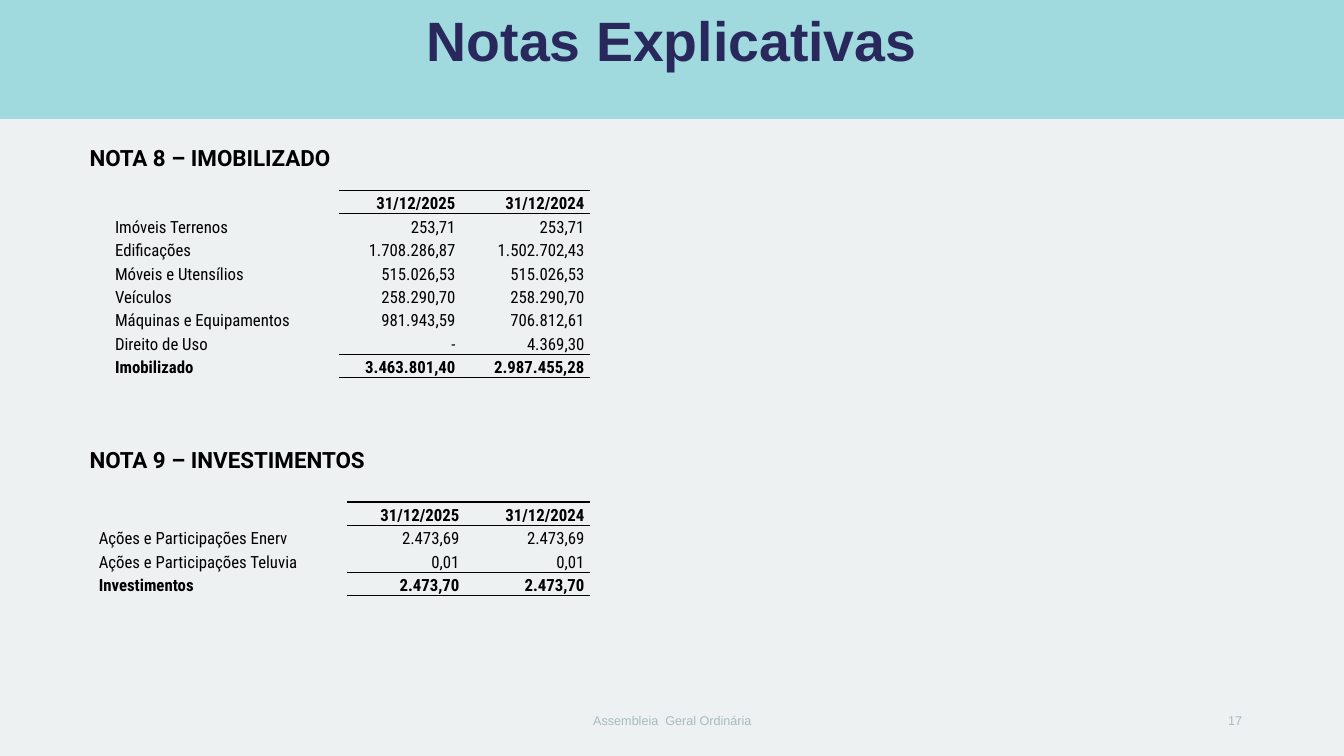
from lxml import etree
from pptx import Presentation
from pptx.dml.color import RGBColor
from pptx.enum.shapes import MSO_SHAPE
from pptx.enum.text import MSO_ANCHOR, PP_ALIGN
from pptx.oxml.ns import qn
from pptx.util import Cm, Pt

RECTANGLE = MSO_SHAPE.RECTANGLE
TOP, MIDDLE, BOTTOM = MSO_ANCHOR.TOP, MSO_ANCHOR.MIDDLE, MSO_ANCHOR.BOTTOM
LEFT, CENTER, RIGHT, JUSTIFY = PP_ALIGN.LEFT, PP_ALIGN.CENTER, PP_ALIGN.RIGHT, PP_ALIGN.JUSTIFY

BLACK, NAVY, GRAY = "000000", "29285D", "A7BBC0"
AQUA, PALE = "A0DADE", "EDF1F2"
PLAIN_TABLE_STYLE = "{2D5ABB26-0587-4C30-8999-92F81FD0307C}"
ROW_HEIGHT = 0.59

DATES = ("", "31/12/2025", "31/12/2024")
FIXED_ASSETS = [
    DATES,
    ("Imóveis Terrenos", "253,71", "253,71"),
    ("Edificações", "1.708.286,87", "1.502.702,43"),
    ("Móveis e Utensílios", "515.026,53", "515.026,53"),
    ("Veículos", "258.290,70", "258.290,70"),
    ("Máquinas e Equipamentos", "981.943,59", "706.812,61"),
    ("Direito de Uso", "-", "4.369,30"),
    ("Imobilizado", "3.463.801,40", "2.987.455,28"),
]
INVESTMENTS = [
    DATES,
    ("Ações e Participações Enerv", "2.473,69", "2.473,69"),
    ("Ações e Participações Teluvia", "0,01", "0,01"),
    ("Investimentos", "2.473,70", "2.473,70"),
]


def rgb(hex_code):
    """Turn a hex string into a colour."""
    return RGBColor.from_string(hex_code)


def write(frame, text, *, size, font="Arial", color=BLACK, bold=False,
          align=LEFT, anchor=MIDDLE, spacing=1.0):
    """Write one formatted paragraph into a text frame."""
    frame.word_wrap = True
    frame.vertical_anchor = anchor
    paragraph = frame.paragraphs[0]
    paragraph.alignment = align
    paragraph.line_spacing = spacing
    paragraph.space_before = paragraph.space_after = Pt(0)
    if not text:
        etree.SubElement(paragraph._p, qn("a:endParaRPr"), sz=str(size * 100))
        return
    run = paragraph.add_run()
    run.text = text
    run.font.size = Pt(size)
    run.font.name = font
    run.font.bold = bold
    run.font.color.rgb = rgb(color)


def add_label(slide, text, left, top, width, **text_format):
    """Add a single-line text box."""
    box = slide.shapes.add_textbox(Cm(left), Cm(top), Cm(width), Cm(1.02))
    write(box.text_frame, text, **text_format)


def add_heading(slide, text, top):
    """Add the heading of a note."""
    add_label(slide, text, 2.01, top, 10.49, size=16, font="Roboto",
              bold=True, align=JUSTIFY, spacing=1.15)


def add_title(slide, text):
    """Place the title over a coloured band across the top."""
    band = slide.shapes.add_shape(RECTANGLE, 0, 0, Cm(33.87), Cm(3))
    band.shadow.inherit = False
    band.fill.solid()
    band.fill.fore_color.rgb = rgb(AQUA)
    band.line.fill.background()
    title = slide.shapes.title
    title._element.addprevious(band._element)
    title.left, title.top, title.width, title.height = Cm(0.38), Cm(0.1), Cm(33.1), Cm(1.88)
    write(title.text_frame, text, size=39.6, color=NAVY, bold=True,
          align=CENTER, anchor=BOTTOM, spacing=0.9)


def rule_cell(cell):
    """Draw black rules above and below a cell."""
    properties = cell._tc.get_or_add_tcPr()
    for position, side in enumerate(("a:lnT", "a:lnB")):
        line = etree.Element(qn(side), w=str(Pt(1)))
        fill = etree.SubElement(line, qn("a:solidFill"))
        etree.SubElement(fill, qn("a:srgbClr"), val=BLACK)
        properties.insert(position, line)


def add_note_table(slide, rows, left, top, widths):
    """Add a note's table, with ruled bold figures in its first and last rows."""
    frame = slide.shapes.add_table(len(rows), len(widths), Cm(left), Cm(top),
                                   Cm(sum(widths)), Cm(ROW_HEIGHT * len(rows)))
    table = frame.table
    table.first_row = table.horz_banding = False
    table._tbl.tblPr.find(qn("a:tableStyleId")).text = PLAIN_TABLE_STYLE
    for column, width in zip(table.columns, widths):
        column.width = Cm(width)
    for row_index, values in enumerate(rows):
        table.rows[row_index].height = Cm(ROW_HEIGHT)
        emphasized = row_index in (0, len(rows) - 1)
        for column_index, value in enumerate(values):
            cell = table.cell(row_index, column_index)
            cell.margin_left = cell.margin_right = Cm(0.13)
            cell.margin_top = cell.margin_bottom = 0
            cell.vertical_anchor = BOTTOM
            cell.fill.background()
            write(cell.text_frame, value, size=12, font="Roboto Condensed",
                  bold=emphasized, align=RIGHT if column_index else LEFT,
                  anchor=TOP, spacing=1.15)
            cell.vertical_anchor = BOTTOM
            if emphasized and column_index:
                rule_cell(cell)


def main():
    """Build the explanatory notes slide."""
    deck = Presentation()
    deck.slide_width, deck.slide_height = Cm(33.87), Cm(19.05)
    slide = deck.slides.add_slide(deck.slide_layouts[5])
    slide.background.fill.solid()
    slide.background.fill.fore_color.rgb = rgb(PALE)
    add_title(slide, "Notas Explicativas")
    add_heading(slide, "NOTA 8 – IMOBILIZADO", 3.4)
    add_note_table(slide, FIXED_ASSETS, 2.77, 4.8, (5.77, 3.07, 3.25))
    add_heading(slide, "NOTA 9 – INVESTIMENTOS", 11.02)
    add_note_table(slide, INVESTMENTS, 2.36, 12.65, (6.38, 2.97, 3.15))
    add_label(slide, "Assembleia  Geral Ordinária", 11.23, 17.65, 11.43,
              size=9, color=GRAY, align=CENTER)
    add_label(slide, "17", 23.93, 17.65, 7.62, size=9, color=GRAY, align=RIGHT)
    deck.save("out.pptx")


if __name__ == "__main__":
    main()
